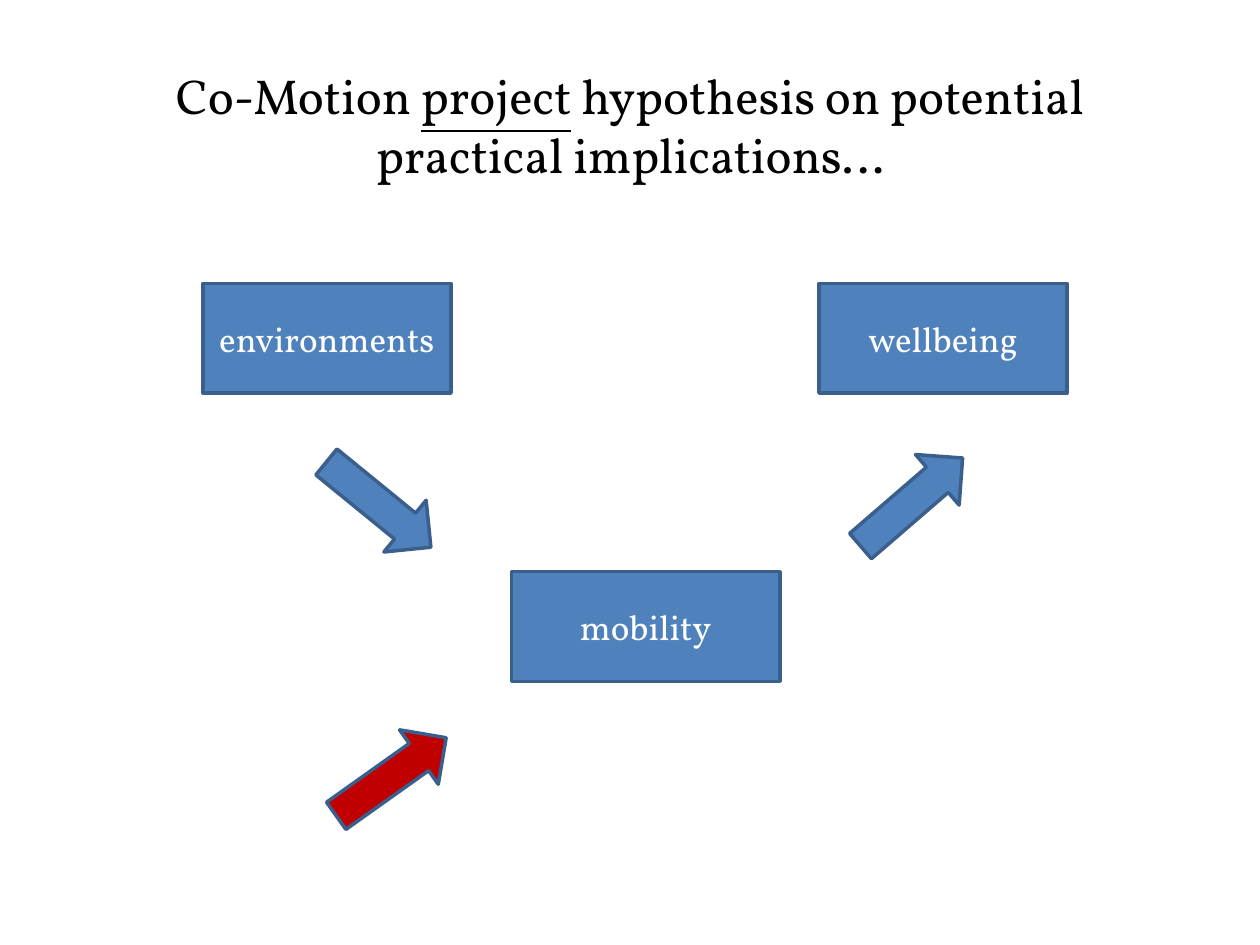
from pptx import Presentation
from pptx.dml.color import RGBColor
from pptx.enum.shapes import MSO_SHAPE as Kind
from pptx.enum.text import MSO_ANCHOR as Anchor, PP_ALIGN as Align
from pptx.util import Inches, Pt

BLUE = RGBColor(0x4F, 0x81, 0xBD)
EDGE = RGBColor(0x3A, 0x5F, 0x8C)
RED = RGBColor(0xC0, 0x00, 0x00)
BLACK = RGBColor(0x00, 0x00, 0x00)
WHITE = RGBColor(0xFF, 0xFF, 0xFF)
FACE = "Vollkorn"

WIDE, HIGH = 10, 7.5
TOP, LOW = 0.3 * HIGH, 0.605 * HIGH  # the two rows of boxes
BOX_H = 0.87
ARROW_W, ARROW_H = 1.07, 0.53


def set_text(shape, parts, size, color):
    """Write one centred paragraph from (text, underlined) parts."""
    frame = shape.text_frame
    frame.word_wrap = True
    frame.vertical_anchor = Anchor.MIDDLE
    para = frame.paragraphs[0]
    para.alignment = Align.CENTER
    para.font.name = FACE
    para.font.size = Pt(size)
    para.font.color.rgb = color
    for text, under in parts:
        run = para.add_run()
        run.text = text
        if under:
            run.font.underline = True


def add_form(slide, kind, left, top, width, height, fill):
    form = slide.shapes.add_shape(
        kind, Inches(left), Inches(top), Inches(width), Inches(height))
    form.shadow.inherit = False
    form.fill.solid()
    form.fill.fore_color.rgb = fill
    form.line.color.rgb = EDGE
    form.line.width = Pt(2)
    return form


def add_box(slide, text, left, top, width):
    box = add_form(slide, Kind.FLOWCHART_PROCESS, left, top, width, BOX_H, BLUE)
    set_text(box, [(text, False)], 20, WHITE)


def add_arrow(slide, left, top, turn, fill):
    arrow = add_form(
        slide, Kind.RIGHT_ARROW, left, top, ARROW_W, ARROW_H, fill)
    arrow.rotation = turn


def add_title(slide, parts):
    box = slide.shapes.add_textbox(
        Inches(0.075 * WIDE), 0, Inches(0.85 * WIDE), Inches(1.97))
    set_text(box, parts, 28, BLACK)


def main():
    deck = Presentation()
    deck.slide_width, deck.slide_height = Inches(WIDE), Inches(HIGH)
    slide = deck.slides.add_slide(deck.slide_layouts[6])

    # Title
    add_title(slide, [
        ("Co-Motion ", False),
        ("project", True),
        (" hypothesis on potential practical implications…", False),
    ])

    # Concepts
    add_box(slide, "environments", 1.61, TOP, 1.97)
    add_box(slide, "wellbeing", 6.5, TOP, 1.97)
    add_box(slide, "mobility", 4.06, LOW, 2.13)

    # Links between concepts, and the outside influence in red
    add_arrow(slide, 2.47, 3.74, 39.2, BLUE)
    add_arrow(slide, 6.7, 3.72, -40.8, BLUE)
    add_arrow(slide, 2.57, 5.9, -35.4, RED)

    deck.save("out.pptx")


if __name__ == "__main__":
    main()
